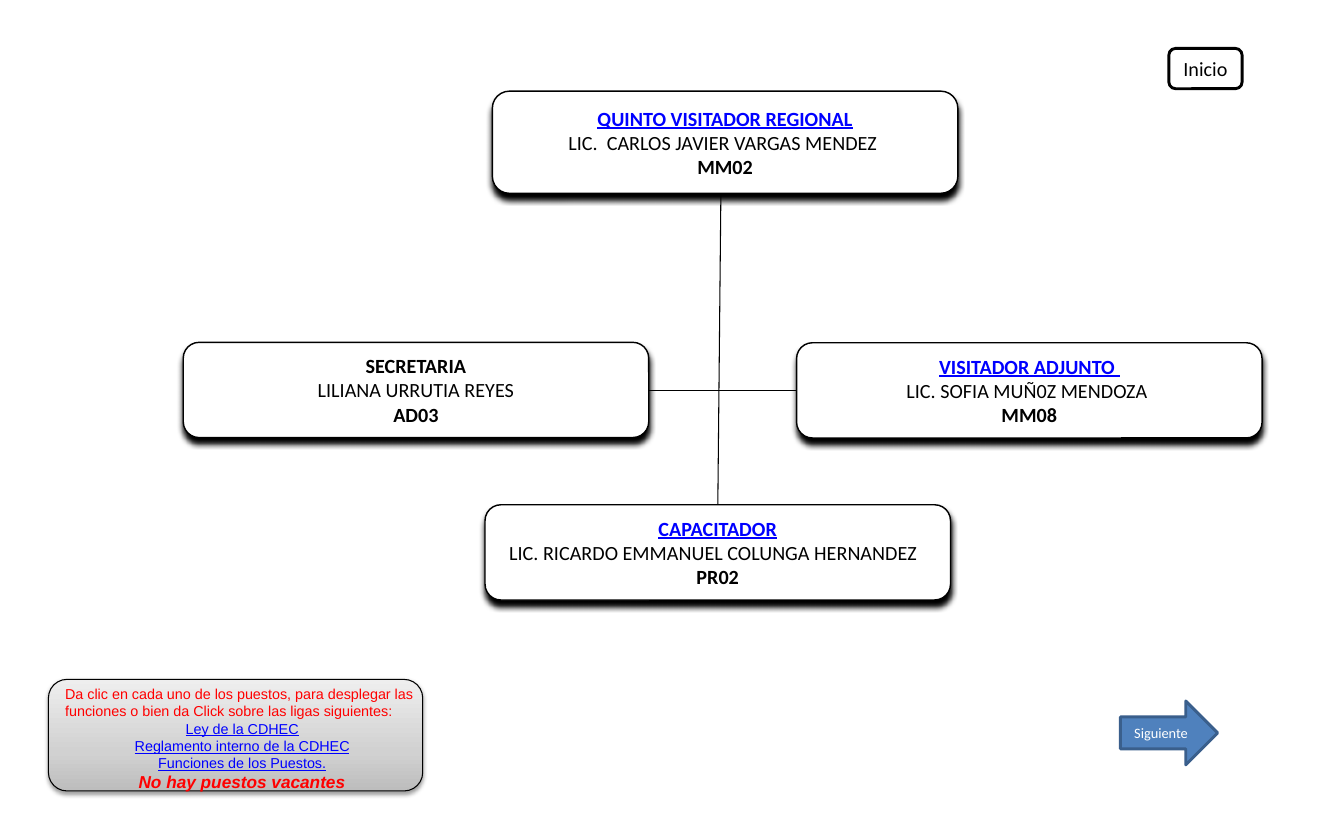
from lxml import etree
from pptx import Presentation
from pptx.dml.color import RGBColor
from pptx.enum import shapes, text
from pptx.oxml import parse_xml
from pptx.oxml.ns import nsdecls, qn
from pptx.util import Cm, Pt

BLACK = RGBColor(0x00, 0x00, 0x00)
WHITE = RGBColor(0xFF, 0xFF, 0xFF)
LINK = RGBColor(0x00, 0x00, 0xFF)
RED = RGBColor(0xFF, 0x00, 0x00)
ARROW = RGBColor(0x4F, 0x81, 0xBD)
ARROW_EDGE = RGBColor(0x3A, 0x5F, 0x8C)

# left, top, height in cm, post, person, level, whether the post is a link
HEAD = (12.09, 2.24, 2.51, "QUINTO VISITADOR REGIONAL",
        "LIC.  CARLOS JAVIER VARGAS MENDEZ ", "MM02", True)
STAFF = [
    (4.5, 8.41, 2.34, "SECRETARIA", "LILIANA URRUTIA REYES", "AD03", False),
    (19.56, 8.42, 2.34, "VISITADOR ADJUNTO ", "LIC. SOFIA MUÑ0Z MENDOZA ", "MM08", True),
    (11.91, 12.4, 2.34, "CAPACITADOR",
     "LIC. RICARDO EMMANUEL COLUNGA HERNANDEZ  ", "PR02", True),
]
POST_WIDTH = 11.43
TRUNK = (17.7, 4.8, 17.63, 12.4)
BRANCH = (15.52, 9.6, 20.07, 9.6)

HINT = ("Da clic en cada uno de los puestos, para desplegar las funciones "
        "o bien da Click sobre las ligas siguientes:")
DOCUMENTS = ["Ley de la CDHEC", "Reglamento interno de la CDHEC", "Funciones de los Puestos."]
VACANCIES = "No hay puestos vacantes"
NOTE_STOPS = [(0, "BDBDBD"), (35, "D1D1D1"), (100, "EEEEEE")]

LEFT, CENTER = text.PP_ALIGN.LEFT, text.PP_ALIGN.CENTER
ROUNDED = shapes.MSO_SHAPE.ROUNDED_RECTANGLE

prs = Presentation()
prs.slide_width, prs.slide_height = Cm(33), Cm(20.02)
s = prs.slides.add_slide(prs.slide_layouts[6])


def add_box(kind, box, fill, line, width):
    sp = s.shapes.add_shape(kind, *map(Cm, box))
    sp.shadow.inherit = False
    if fill is not None:
        sp.fill.solid()
        sp.fill.fore_color.rgb = fill
    sp.line.color.rgb = line
    sp.line.width = Pt(width)
    return sp


def drop_shadow(sp, alpha, blur, dist):
    effects = sp._element.spPr.find(qn("a:effectLst"))
    effects.append(parse_xml(
        f'<a:outerShdw {nsdecls("a")} blurRad="{Pt(blur)}" dist="{Pt(dist)}" dir="5400000" '
        f'algn="ctr" rotWithShape="0"><a:srgbClr val="000000">'
        f'<a:alpha val="{alpha * 1000}"/></a:srgbClr></a:outerShdw>'))


def grey_gradient(sp):
    stops = "".join(f'<a:gs pos="{pos * 1000}"><a:srgbClr val="{rgb}"/></a:gs>'
                    for pos, rgb in NOTE_STOPS)
    sp._element.spPr.find(qn("a:prstGeom")).addnext(parse_xml(
        f'<a:gradFill {nsdecls("a")} rotWithShape="1"><a:gsLst>{stops}</a:gsLst>'
        f'<a:lin ang="16200000" scaled="1"/></a:gradFill>'))


def write(tf, lines, font):
    """Each line is (words, size, colour, alignment, styles), styles being any of b, i, u."""
    for n, (words, size, color, align, styles) in enumerate(lines):
        p = tf.add_paragraph() if n else tf.paragraphs[0]
        p.alignment = align
        r = p.add_run()
        r.text = words
        r.font.name, r.font.size = font, Pt(size)
        r.font.color.rgb = color
        r.font.bold, r.font.italic, r.font.underline = (k in styles for k in "biu")


def add_post(left, top, height, post, person, level, linked):
    sp = add_box(ROUNDED, (left, top, POST_WIDTH, height), WHITE, BLACK, 1)
    drop_shadow(sp, 100, 4, 4)
    tf = sp.text_frame
    tf.word_wrap = False
    tf.vertical_anchor = text.MSO_ANCHOR.MIDDLE
    tf.margin_left = tf.margin_right = Cm(0.43)
    tf.margin_top = tf.margin_bottom = Cm(0.23)
    write(tf, [(post, 14, LINK if linked else BLACK, CENTER, "bu" if linked else "b"),
               (person, 14, BLACK, CENTER, ""),
               (level, 14, BLACK, CENTER, "b")], "Calibri")
    return sp


def add_line(ends):
    line = s.shapes.add_connector(shapes.MSO_CONNECTOR.STRAIGHT, *map(Cm, ends))
    line.line.color.rgb = BLACK
    line.line.width = Pt(0.75)
    etree.SubElement(line._element.spPr, qn("a:effectLst"))
    return line


def add_button(kind, box, fill, line, label, size, color):
    tf = add_box(kind, box, fill, line, 2).text_frame
    tf.word_wrap = True
    tf.vertical_anchor = text.MSO_ANCHOR.MIDDLE
    write(tf, [(label, size, color, CENTER, "")], "Calibri")


add_post(*HEAD)
trunk = add_line(TRUNK)
add_line(BRANCH)
secretary, deputy, trainer = [add_post(*post) for post in STAFF]
trunk.end_connect(trainer, 0)

add_button(ROUNDED, (28.7, 1.19, 1.8, 0.99), WHITE, BLACK, "Inicio", 14, BLACK)

note = add_box(ROUNDED, (1.19, 16.69, 9.19, 2.74), None, BLACK, 0.75)
grey_gradient(note)
drop_shadow(note, 38, 3.1, 1.6)
tf = s.shapes.add_textbox(Cm(1.35), Cm(16.71), Cm(9.19), Cm(2.9)).text_frame
tf.word_wrap = True
write(tf, [(HINT, 10, RED, LEFT, "")]
      + [(name, 10, LINK, CENTER, "u") for name in DOCUMENTS]
      + [(VACANCIES, 12, RED, CENTER, "bi")], "Arial")

add_button(shapes.MSO_SHAPE.RIGHT_ARROW, (27.51, 17.22, 2.39, 1.57), ARROW, ARROW_EDGE,
           "Siguiente", 10, WHITE)

prs.save("out.pptx")
